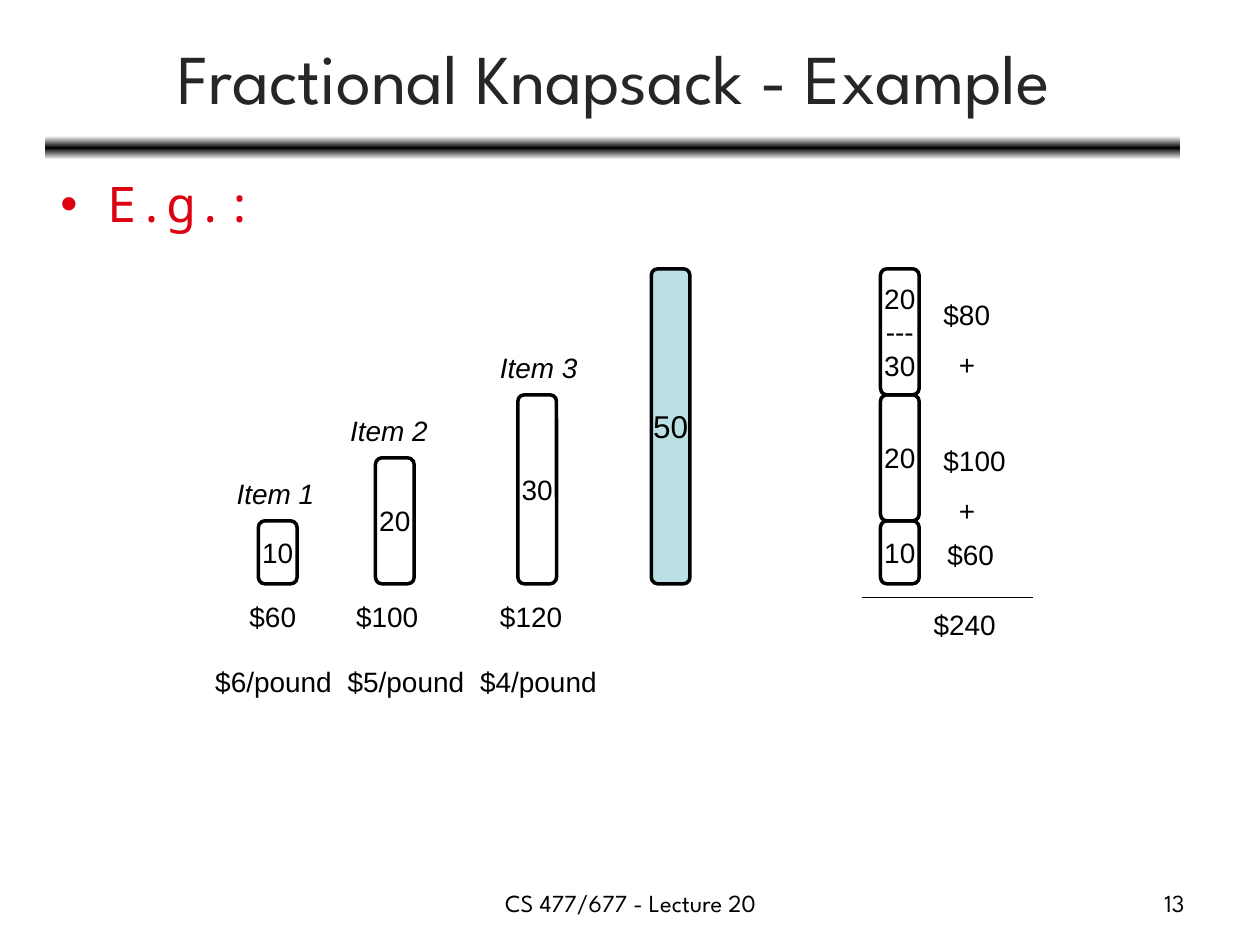
"""Build the fractional knapsack example slide."""
from copy import deepcopy
from typing import NamedTuple

from lxml import etree
from pptx import Presentation
from pptx.dml.color import RGBColor
from pptx.enum.shapes import MSO_CONNECTOR, MSO_SHAPE
from pptx.enum.text import MSO_ANCHOR, MSO_AUTO_SIZE, PP_ALIGN
from pptx.oxml.ns import qn
from pptx.util import Cm, Pt

ROUNDED = MSO_SHAPE.ROUNDED_RECTANGLE
STRAIGHT = MSO_CONNECTOR.STRAIGHT
LEFT, CENTER, RIGHT = PP_ALIGN.LEFT, PP_ALIGN.CENTER, PP_ALIGN.RIGHT
MIDDLE = MSO_ANCHOR.MIDDLE
FIT, FIXED = MSO_AUTO_SIZE.SHAPE_TO_FIT_TEXT, MSO_AUTO_SIZE.NONE

BLACK, WHITE, TEAL, RED, GREY = "000000", "FFFFFF", "BBE0E3", "DD0111", "262626"
LABEL = {"name": "Arial", "size": Pt(16)}
NAME = LABEL | {"italic": True}
CAPACITY = LABEL | {"size": Pt(18)}
FOOTER = {"name": "League Spartan", "size": Pt(14)}
HEADING = {"name": "League Spartan", "size": Pt(40)}
BULLET = {"name": "Noto Sans Mono", "size": Pt(28)}

BASELINE = 11.77
CM_PER_POUND = 0.127
BAR_WIDTH = 0.78
KNAPSACK_LEFT = 17.75
LABEL_HEIGHT = 0.94
PRICE_WIDTH = 1.85


class Item(NamedTuple):
    name: str
    pounds: int
    price: str
    rate: str
    bar_left: float
    name_left: float
    price_left: float


class Portion(NamedTuple):
    pounds: int
    lines: list[str]


class Label(NamedTuple):
    lines: list[str]
    left: float
    top: float
    width: float = PRICE_WIDTH


ITEMS = [
    Item("Item 1", 10, "$60", "$6/pound", 5.21, 4.52, 4.78),
    Item("Item 2", 20, "$100", "$5/pound", 7.57, 6.81, 6.93),
    Item("Item 3", 30, "$120", "$4/pound", 10.44, 9.83, 9.83),
]
PORTIONS = [
    Portion(10, ["10"]),
    Portion(20, ["20"]),
    Portion(20, ["20", "---", "30"]),
]
GAINS = [
    Label(["$80", "+"], 18.77, 5.87),
    Label(["$100", "+"], 18.77, 8.81),
    Label(["$60"], 18.85, 10.72),
    Label(["$240"], 18.57, 12.12),
]


def rgb(value: str) -> RGBColor:
    return RGBColor.from_string(value)


def write(frame, lines: list[str], style: dict, align=LEFT, color: str = BLACK) -> None:
    for index, line in enumerate(lines):
        paragraph = frame.paragraphs[0] if index == 0 else frame.add_paragraph()
        paragraph.alignment = align
        run = paragraph.add_run()
        run.text = line
        for key, value in style.items():
            setattr(run.font, key, value)
        run.font.color.rgb = rgb(color)


def add_text(slide, label: Label, style: dict, align=LEFT, color: str = BLACK,
             wrap: bool = False, height: float = LABEL_HEIGHT):
    box = slide.shapes.add_textbox(Cm(label.left), Cm(label.top), Cm(label.width), Cm(height))
    frame = box.text_frame
    frame.word_wrap = wrap
    frame.auto_size = FIXED if wrap else FIT
    write(frame, label.lines, style, align, color)
    return frame


def add_bar(slide, left: float, bottom: float, pounds: int, lines: list[str],
            style: dict = LABEL, fill: str = WHITE) -> float:
    height = pounds * CM_PER_POUND
    top = bottom - height
    bar = slide.shapes.add_shape(ROUNDED, Cm(left), Cm(top), Cm(BAR_WIDTH), Cm(height))
    bar.shadow.inherit = False
    bar.fill.solid()
    bar.fill.fore_color.rgb = rgb(fill)
    bar.line.color.rgb = rgb(BLACK)
    bar.line.width = Pt(2)
    bar.text_frame.word_wrap = False
    bar.text_frame.vertical_anchor = MIDDLE
    write(bar.text_frame, lines, style, CENTER)
    return top


def add_item(slide, item: Item, rate_left: float) -> None:
    top = add_bar(slide, item.bar_left, BASELINE, item.pounds, [str(item.pounds)])
    add_text(slide, Label([item.name], item.name_left, top - 1.02, 2.15), NAME)
    add_text(slide, Label([item.price], item.price_left, 11.96), LABEL)
    add_text(slide, Label([item.rate], rate_left, 13.28, 2.95), LABEL)


def add_gain(slide, gain: Label) -> None:
    frame = add_text(slide, gain, LABEL)
    for plus in frame.paragraphs[1:]:
        plus.space_before = Pt(9.5)
        plus._p.get_or_add_pPr().set("marL", str(Cm(0.31)))


def add_rule(slide) -> None:
    rule = slide.shapes.add_shape(ROUNDED, Cm(0.91), Cm(2.74), Cm(22.89), Cm(0.48))
    rule.shadow.inherit = False
    rule.line.fill.background()
    rule.fill.gradient()
    rule.fill.gradient_angle = 90
    edge, middle = rule.fill.gradient_stops
    edge.color.rgb, edge.position = rgb(WHITE), 0
    middle.color.rgb, middle.position = rgb(BLACK), 0.5
    stops = rule._element.spPr.find(".//" + qn("a:gsLst"))
    last = deepcopy(stops[0])
    last.set("pos", "100000")
    stops.append(last)


def add_sum_line(slide) -> None:
    line = slide.shapes.add_connector(STRAIGHT, Cm(17.37), Cm(12.04), Cm(20.83), Cm(12.04))
    line.line.color.rgb = rgb(BLACK)
    line.line.width = Pt(0.75)
    etree.SubElement(line._element.spPr, qn("a:effectLst"))


def add_title(slide) -> None:
    title = slide.shapes.title
    position = {"left": 0.94, "top": 0.28, "width": 22.86, "height": 2.51}
    for key, value in position.items():
        setattr(title, key, Cm(value))
    title.text_frame.vertical_anchor = MIDDLE
    title.text_frame.auto_size = FIXED
    write(title.text_frame, ["Fractional Knapsack - Example"], HEADING, CENTER, GREY)


def add_bullet(slide) -> None:
    frame = add_text(slide, Label(["E.g.:"], 0.97, 3.38, 22.86), BULLET,
                     color=RED, wrap=True, height=3)
    paragraph = frame.paragraphs[0]
    paragraph.space_before = Pt(5.6)
    properties = paragraph._p.get_or_add_pPr()
    properties.set("marL", str(Cm(0.95)))
    properties.set("indent", str(Cm(-0.95)))
    etree.SubElement(properties, qn("a:buFont")).set("typeface", "Arial")
    etree.SubElement(properties, qn("a:buChar")).set("char", "•")


def main() -> None:
    deck = Presentation()
    deck.slide_width, deck.slide_height = Cm(25.4), Cm(19.05)
    slide = deck.slides.add_slide(deck.slide_layouts[5])
    add_rule(slide)
    add_title(slide)
    add_bullet(slide)
    for index, item in enumerate(ITEMS):
        add_item(slide, item, 4.09 + 2.67 * index)
    add_bar(slide, 13.13, BASELINE, 50, ["50"], CAPACITY, TEAL)
    bottom = BASELINE
    for portion in PORTIONS:
        bottom = add_bar(slide, KNAPSACK_LEFT, bottom, portion.pounds, portion.lines)
    for gain in GAINS:
        add_gain(slide, gain)
    add_sum_line(slide)
    add_text(slide, Label(["CS 477/677 - Lecture 20"], 8.69, 17.78, 8.05), FOOTER, CENTER, wrap=True)
    add_text(slide, Label(["13"], 18.21, 17.78, 5.92), FOOTER, RIGHT, wrap=True)
    deck.save("out.pptx")


if __name__ == "__main__":
    main()
